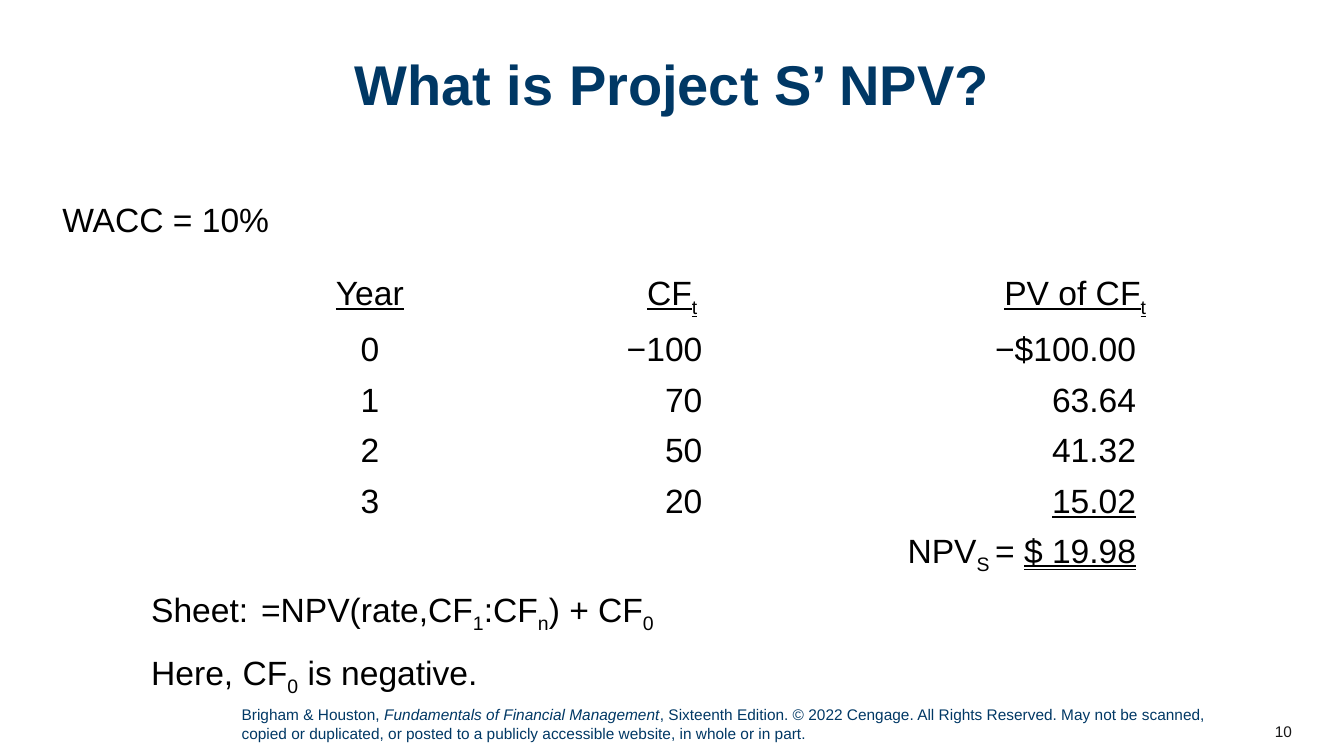
from lxml.etree import SubElement
from pptx import Presentation
from pptx.dml.color import RGBColor
from pptx.enum.text import MSO_ANCHOR, MSO_UNDERLINE, PP_ALIGN
from pptx.oxml.ns import qn
from pptx.util import Cm, Pt

COLORS = {"navy": "003865", "black": "000000", "number": "181717"}
UNDERLINES = {"single": MSO_UNDERLINE.SINGLE_LINE, "double": MSO_UNDERLINE.DOUBLE_LINE}
LEFT, CENTER, RIGHT = PP_ALIGN.LEFT, PP_ALIGN.CENTER, PP_ALIGN.RIGHT


def write(para, spans, size=24, color="black", align=LEFT, bold=None, underline=None, tab=None):
    para.alignment = align
    if tab is not None:
        tab_list = SubElement(para._p.get_or_add_pPr(), qn("a:tabLst"))
        SubElement(tab_list, qn("a:tab"), pos=str(tab), algn="l")
    font = para.font
    font.name = "Arial"
    font.size = Pt(size)
    font.color.rgb = RGBColor.from_string(COLORS[color])
    font.bold = bold
    font.underline = underline
    for text, style in spans:
        span = para.add_run()
        span.text = text
        if style == "sub":
            span._r.get_or_add_rPr().set("baseline", "-25000")
        elif style == "italic":
            span.font.italic = True
        elif style in UNDERLINES:
            span.font.underline = UNDERLINES[style]


def add_text_frame(page, box):
    frame = page.shapes.add_textbox(*[Cm(length) for length in box]).text_frame
    frame.word_wrap = True
    return frame


def add_title(page, box):
    para = add_text_frame(page, box).paragraphs[0]
    para.line_spacing = 0.9
    write(para, [("What is Project S’ NPV?", "")], size=40, color="navy", align=CENTER, bold=True)


def add_body(page, box, lines, tab=None):
    frame = add_text_frame(page, box)
    for index, spans in enumerate(lines):
        para = frame.add_paragraph() if index else frame.paragraphs[0]
        if index:
            para.space_before = Pt(6)
        para.space_after = Pt(6)
        write(para, spans, tab=tab)


def add_cash_flows(page, box):
    rows = [
        [[("Year", "")], [("CF", ""), ("t", "sub")], [("PV of CF", ""), ("t", "sub")]],
        [[("0", "")], [("−100", "")], [("−$100.00", "")]],
        [[("1", "")], [("70", "")], [("63.64", "")]],
        [[("2", "")], [("50", "")], [("41.32", "")]],
        [[("3", "")], [("20", "")], [("15.02", "single")]],
        [[], [], [("NPV", ""), ("S ", "sub"), ("= ", ""), ("$ 19.98", "double")]],
    ]
    header_layout = [(CENTER, 0.03), (CENTER, 0.03), (RIGHT, 1.78)]
    value_layout = [(CENTER, 0.03), (RIGHT, 3.05), (RIGHT, 2.03)]
    lengths = [Cm(length) for length in box]
    holder = page.shapes.add_table(len(rows), 3, *lengths)
    table = holder.table
    table.first_row = False
    table.horz_banding = False
    for column, width in zip(table.columns, (7.62, 7.62, 9.91)):
        column.width = Cm(width)
    for row in table.rows:
        row.height = Cm(1.22)
    holder.height = lengths[3]
    for row_index, row in enumerate(rows):
        layout = value_layout if row_index else header_layout
        underline = None if row_index else True
        for column_index, (spans, (align, margin)) in enumerate(zip(row, layout)):
            cell = table.cell(row_index, column_index)
            cell.fill.background()
            cell.margin_left = Cm(0.03)
            cell.margin_right = Cm(margin)
            write(cell.text_frame.paragraphs[0], spans, align=align, underline=underline)


def add_footer(page, box):
    spans = [
        ("Brigham & Houston, ", ""),
        ("Fundamentals of Financial Management", "italic"),
        (", Sixteenth Edition. © 2022 Cengage. All Rights Reserved. May not be scanned, "
         "copied or duplicated, or posted to a publicly accessible website, in whole or in part.", ""),
    ]
    write(add_text_frame(page, box).paragraphs[0], spans, size=11, color="navy")


def add_page_number(page, box):
    frame = add_text_frame(page, box)
    frame.vertical_anchor = MSO_ANCHOR.MIDDLE
    write(frame.paragraphs[0], [("10", "")], size=11, color="number", align=RIGHT)


def main():
    deck = Presentation()
    deck.slide_width, deck.slide_height = Cm(33.87), Cm(19.05)
    page = deck.slides.add_slide(deck.slide_layouts[6])
    add_page_number(page, (30.78, 17.91, 2.03, 1.02))
    add_footer(page, (5.84, 17.65, 24.89, 1.19))
    add_title(page, (1.32, 1.32, 31.22, 3.38))
    add_body(page, (1.32, 4.9, 30.76, 1.52), [[("WACC = 10%", "")]])
    add_cash_flows(page, (5.51, 6.81, 25.15, 7.62))
    formula = [("Sheet:\t=NPV(rate,CF", ""), ("1", "sub"), (":CF", ""), ("n", "sub"),
               (") + CF", ""), ("0", "sub")]
    remark = [("Here, CF", ""), ("0", "sub"), (" is negative.", "")]
    add_body(page, (3.56, 14.71, 25.48, 2.82), [formula, remark], tab=Cm(2.77))
    deck.save("out.pptx")


if __name__ == "__main__":
    main()
